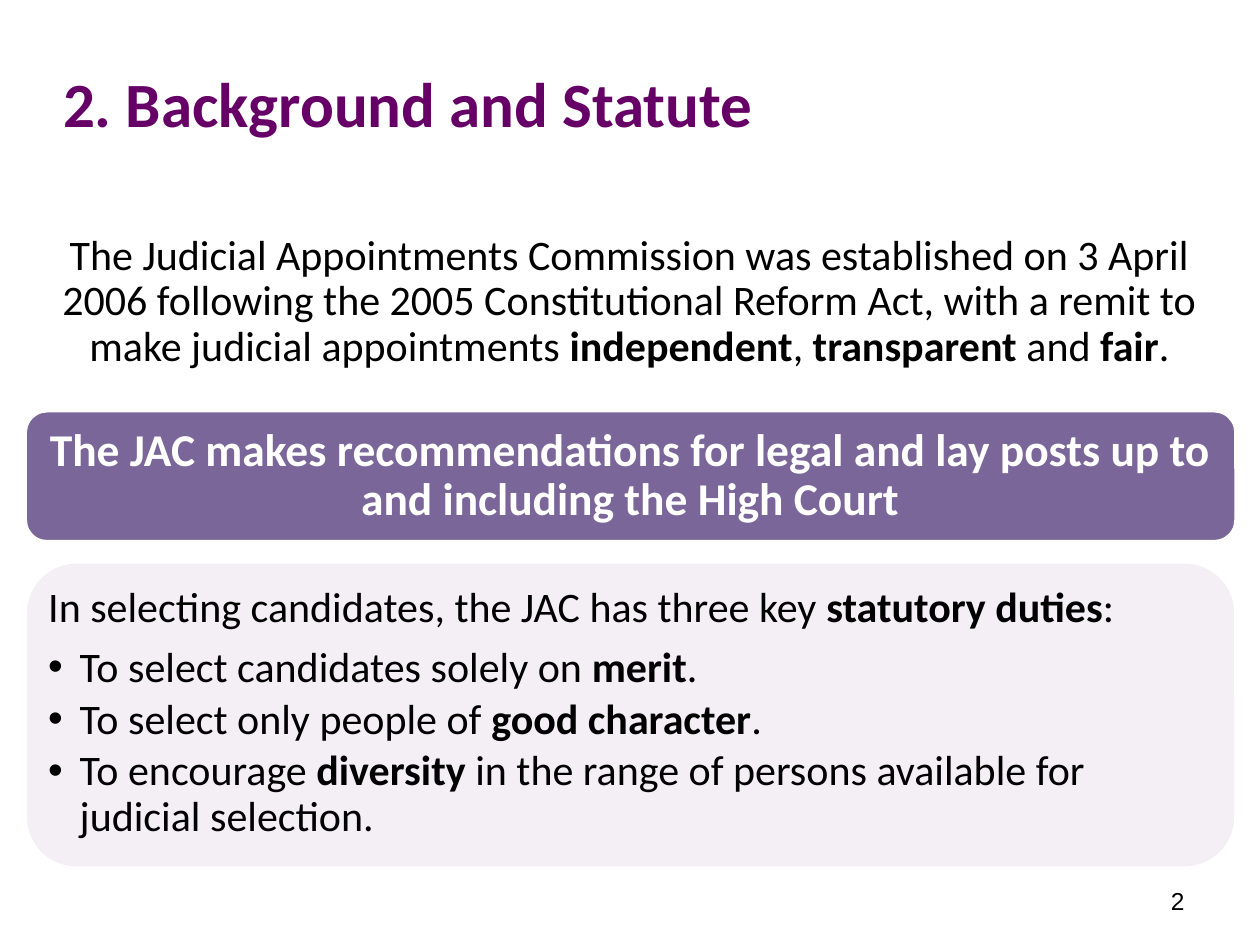
"""Build the Background and Statute slide."""
from lxml.etree import SubElement
from pptx import Presentation
from pptx.dml.color import RGBColor
from pptx.enum.shapes import MSO_SHAPE
from pptx.enum.text import MSO_ANCHOR, MSO_AUTO_SIZE, PP_ALIGN
from pptx.oxml.ns import qn
from pptx.util import Pt

COLORS = {
    "title": "660066",
    "text": "000000",
    "white": "FFFFFF",
    "banner": "7A6698",
    "panel": "F3EFF5",
}
INSET = 5.25
LINE_SPACING = 0.9


class SlideBuilder:
    """Hold the slide and its text style, and add each kind of element."""

    def __init__(self, slide, font="Calibri"):
        self.slide = slide
        self.font = font

    def place(self, shape, left, top, width, height):
        shape.left, shape.top = Pt(left), Pt(top)
        shape.width, shape.height = Pt(width), Pt(height)

    def frame(self, shape, inset=None, anchor=MSO_ANCHOR.MIDDLE):
        frame = shape.text_frame
        frame.word_wrap = True
        frame.auto_size = MSO_AUTO_SIZE.NONE
        frame.vertical_anchor = anchor
        if inset is not None:
            frame.margin_left = frame.margin_right = Pt(inset)
            frame.margin_top = frame.margin_bottom = Pt(inset)
        return frame

    def add_runs(self, paragraph, parts, size, color="text", bold=False, align=PP_ALIGN.LEFT, font=None):
        """Add the parts as runs that alternate in weight."""
        paragraph.alignment = align
        for part in parts:
            run = paragraph.add_run()
            run.text = part
            run.font.name = font or self.font
            run.font.size = Pt(size)
            run.font.bold = bold
            run.font.color.rgb = RGBColor.from_string(COLORS[color])
            bold = not bold

    def title(self, box, text):
        title = self.slide.shapes.title
        self.place(title, *box)
        self.add_runs(self.frame(title).paragraphs[0], [text], 36, "title", bold=True)

    def block(self, preset, box, fill, parts=(), size=24, color="text", bold=False):
        shape = self.slide.shapes.add_shape(preset, *map(Pt, box))
        shape.shadow.inherit = False
        shape.fill.solid()
        shape.fill.fore_color.rgb = RGBColor.from_string(COLORS[fill])
        shape.line.color.rgb = RGBColor.from_string(COLORS["white"])
        shape.line.width = Pt(2)
        paragraph = self.frame(shape, INSET).paragraphs[0]
        paragraph.line_spacing = LINE_SPACING
        self.add_runs(paragraph, parts, size, color, bold, PP_ALIGN.CENTER)

    def bullet_list(self, box, intro, items, size=24):
        body = self.slide.placeholders[1]
        self.place(body, *box)
        body.element.getparent().append(body.element)
        frame = self.frame(body, INSET, MSO_ANCHOR.TOP)
        for index, parts in enumerate([intro, *items]):
            paragraph = frame.add_paragraph() if index else frame.paragraphs[0]
            properties = paragraph._p.get_or_add_pPr()
            indent = Pt(18) if index else 0
            properties.set("marL", str(indent))
            properties.set("indent", str(-indent))
            if index:
                SubElement(properties, qn("a:buChar")).set("char", "•")
                paragraph.level = 1
            else:
                SubElement(properties, qn("a:buNone"))
            paragraph.line_spacing = LINE_SPACING
            paragraph.space_before = Pt(0)
            paragraph.space_after = Pt(size * (0.15 if index else 0.35))
            self.add_runs(paragraph, parts, size)

    def page_number(self, box, number):
        shape = self.slide.shapes.add_textbox(*map(Pt, box))
        paragraph = self.frame(shape).paragraphs[0]
        self.add_runs(paragraph, [number], 14, align=PP_ALIGN.RIGHT, font="Arial")


def main():
    presentation = Presentation()
    presentation.slide_width, presentation.slide_height = Pt(720), Pt(540)
    slide = presentation.slides.add_slide(presentation.slide_layouts[1])
    builder = SlideBuilder(slide)

    builder.title((28.8, 28.1, 666.7, 61.2), "2. Background and Statute")
    builder.block(
        MSO_SHAPE.RECTANGLE, (14.4, 113, 690.5, 119.5), "white",
        ["The Judicial Appointments Commission was established on 3 April 2006 following "
         "the 2005 Constitutional Reform Act, with a remit to make judicial appointments ",
         "independent", ", ", "transparent", " and ", "fair", "."],
    )
    builder.block(
        MSO_SHAPE.ROUNDED_RECTANGLE, (14.4, 234.7, 691.9, 74.9), "banner",
        ["The JAC makes recommendations for legal and lay posts up to and including the High Court"],
        size=26, color="white", bold=True,
    )
    builder.block(MSO_SHAPE.ROUNDED_RECTANGLE, (14.4, 321.1, 691.9, 175), "panel")
    builder.bullet_list(
        (22.3, 329.8, 674.6, 157.7),
        ["In selecting candidates, the JAC has three key ", "statutory duties", ":"],
        [
            ["To select candidates solely on ", "merit", "."],
            ["To select only people of ", "good character", "."],
            ["To encourage ", "diversity", " in the range of persons available for judicial selection."],
        ],
    )
    builder.page_number((516.2, 500.4, 167.8, 28.8), "2")
    presentation.save("out.pptx")


if __name__ == "__main__":
    main()
